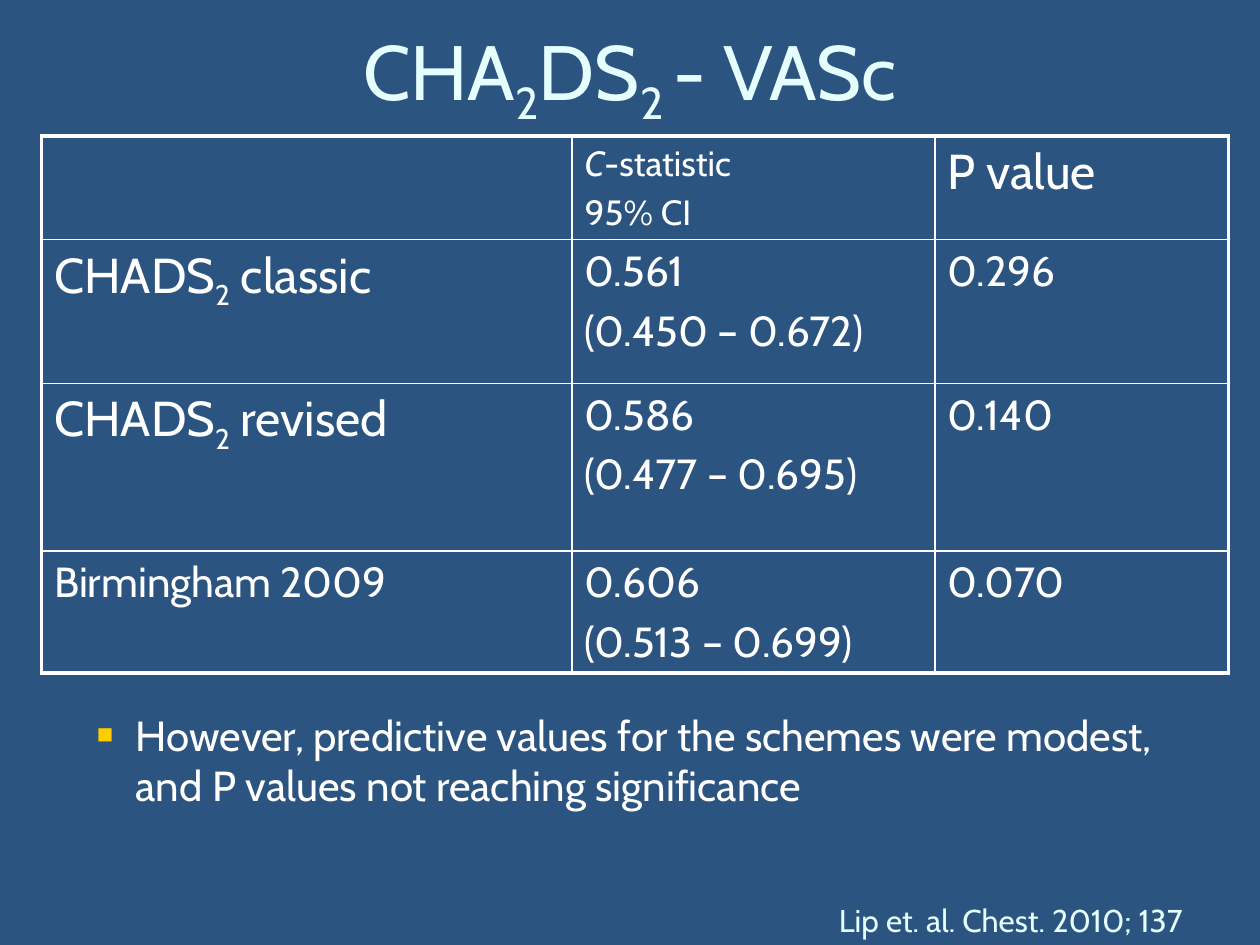
from pptx import Presentation
from pptx.dml.color import RGBColor
from pptx.enum.text import MSO_ANCHOR, PP_ALIGN
from pptx.oxml import parse_xml
from pptx.oxml.ns import nsdecls
from pptx.util import Inches, Pt

COLS, ROWS = 100, 75  # layout grid of the slide
THICK, THIN = 2.25, 1


def rgb(value):
    return RGBColor.from_string(value)


def element(tag, content="", **attrs):
    """Make a DrawingML element from a tag, inner XML and attributes."""
    pairs = " ".join(f'{k}="{v}"' for k, v in attrs.items())
    return parse_xml(f'<a:{tag} {nsdecls("a")} {pairs}>{content}</a:{tag}>')


def solid(value):
    return f'<a:solidFill><a:srgbClr val="{value}"/></a:solidFill>'


class Deck:
    font, white, pale = "Cabin", "FFFFFF", "E5FFFF"
    background, bullet = "2B5481", "FFCC00"

    def __init__(self):
        self.prs = Presentation()
        self.prs.slide_width, self.prs.slide_height = Inches(10), Inches(7.5)
        self.slide = self.prs.slides.add_slide(self.prs.slide_layouts[6])
        fill = self.slide.background.fill
        fill.solid()
        fill.fore_color.rgb = rgb(self.background)

    def x(self, columns):
        return int(self.prs.slide_width * columns / COLS)

    def y(self, rows):
        return int(self.prs.slide_height * rows / ROWS)

    def fill_text(self, tf, lines, size, color):
        """Fill a frame; "|" splits runs, "_" marks a subscript and "/" italics."""
        for i, line in enumerate(lines):
            p = tf.add_paragraph() if i else tf.paragraphs[0]
            if i:
                p.space_before = Pt(size * 0.2)
            for part in line.split("|"):
                r = p.add_run()
                r.text = part.lstrip("_/")
                r.font.name, r.font.size = self.font, Pt(size)
                r.font.color.rgb = rgb(color)
                if part.startswith("_"):
                    r.font._element.set("baseline", "-25000")
                r.font.italic = part.startswith("/")

    def text(self, left, top, width, height, line, size, color, wrap=True):
        sp = self.slide.shapes.add_textbox(
            self.x(left), self.y(top), self.x(width), self.y(height))
        tf = sp.text_frame
        tf.word_wrap = wrap
        self.fill_text(tf, [line], size, color)
        return tf

    def title(self, *box, line):
        tf = self.text(*box, line, 44, self.pale)
        tf.vertical_anchor = MSO_ANCHOR.MIDDLE
        tf.paragraphs[0].alignment = PP_ALIGN.CENTER

    def bullet_text(self, *box, line):
        p = self.text(*box, line, 24, self.white).paragraphs[0]
        pPr = p._p.get_or_add_pPr()
        pPr.set("marL", str(Inches(0.81)))
        pPr.set("indent", str(Inches(-0.31)))
        pPr.append(element("buClr", f'<a:srgbClr val="{self.bullet}"/>'))
        pPr.append(element("buSzPct", val=65000))
        pPr.append(element("buFont", typeface="Arial"))
        pPr.append(element("buChar", char="■"))

    def borders(self, cell, widths):
        """Set the left, right, top and bottom lines of a cell."""
        tcPr = cell._tc.get_or_add_tcPr()
        for i, (side, width) in enumerate(zip("LRTB", widths)):
            tcPr.insert(i, element(f"ln{side}", solid(self.white), w=Pt(width)))

    def table(self, left, top, widths, heights, rows):
        """Add a table whose cells are (size, lines), with a thick outer frame."""
        table = self.slide.shapes.add_table(
            len(heights), len(widths), self.x(left), self.y(top),
            self.x(sum(widths)), self.y(sum(heights))).table
        table.first_row = table.horz_banding = False
        for column, width in zip(table.columns, widths):
            column.width = self.x(width)
        last_row, last_col = len(heights) - 1, len(widths) - 1
        for i, row in enumerate(rows):
            table.rows[i].height = self.y(heights[i])
            for j, (size, lines) in enumerate(row):
                cell = table.cell(i, j)
                cell.fill.background()
                self.fill_text(cell.text_frame, lines, size, self.white)
                outer = (j == 0, j == last_col, i == 0, i == last_row)
                self.borders(cell, [THICK if edge else THIN for edge in outer])


def main():
    deck = Deck()
    deck.title(5, 1.7, 90, 8.7, line="CHA|_2|DS|_2 |- VASc")

    schemes = [
        (28, "CHADS|_2| classic", "0.561", "(0.450 – 0.672)", "0.296"),
        (28, "CHADS|_2| revised", "0.586", "(0.477 – 0.695)", "0.140"),
        (24, "Birmingham 2009", "0.606", "(0.513 – 0.699)", "0.070"),
    ]
    header = [(28, []), (20, ["/C|-statistic", "95% CI"]), (28, ["P value"])]
    body = [[(size, [name]), (24, [statistic, interval]), (24, [p_value])]
            for size, name, statistic, interval, p_value in schemes]
    deck.table(3.3, 10.8, [42.1, 28.8, 23.3], [8.2, 11.4, 13.3, 9.7],
               [header] + body)

    deck.bullet_text(1.7, 55.8, 95, 10.8, line=(
        "However, predictive values for the schemes were modest, "
        "and P values not reaching significance"))
    deck.text(65.6, 71, 32.1, 4, "Lip et. al. Chest. 2010; 137", 18,
              deck.pale, wrap=False)
    deck.prs.save("out.pptx")


if __name__ == "__main__":
    main()
